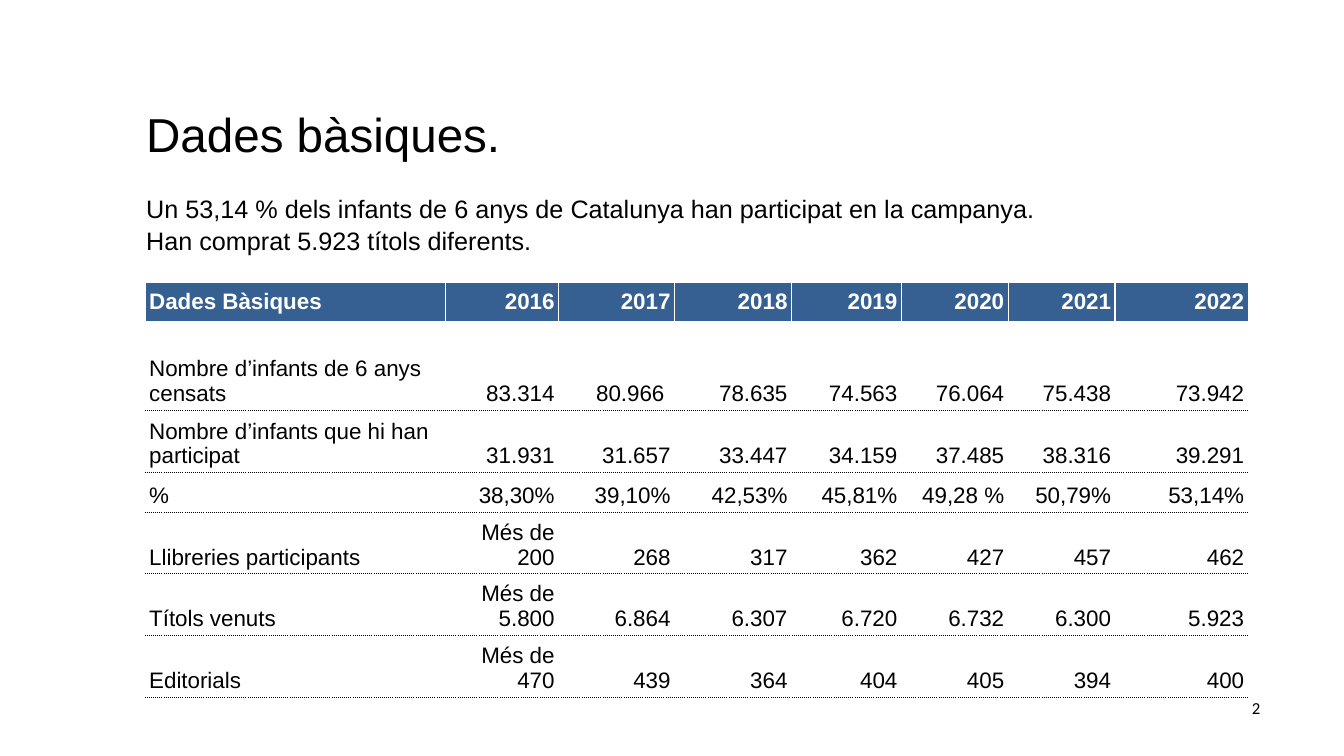
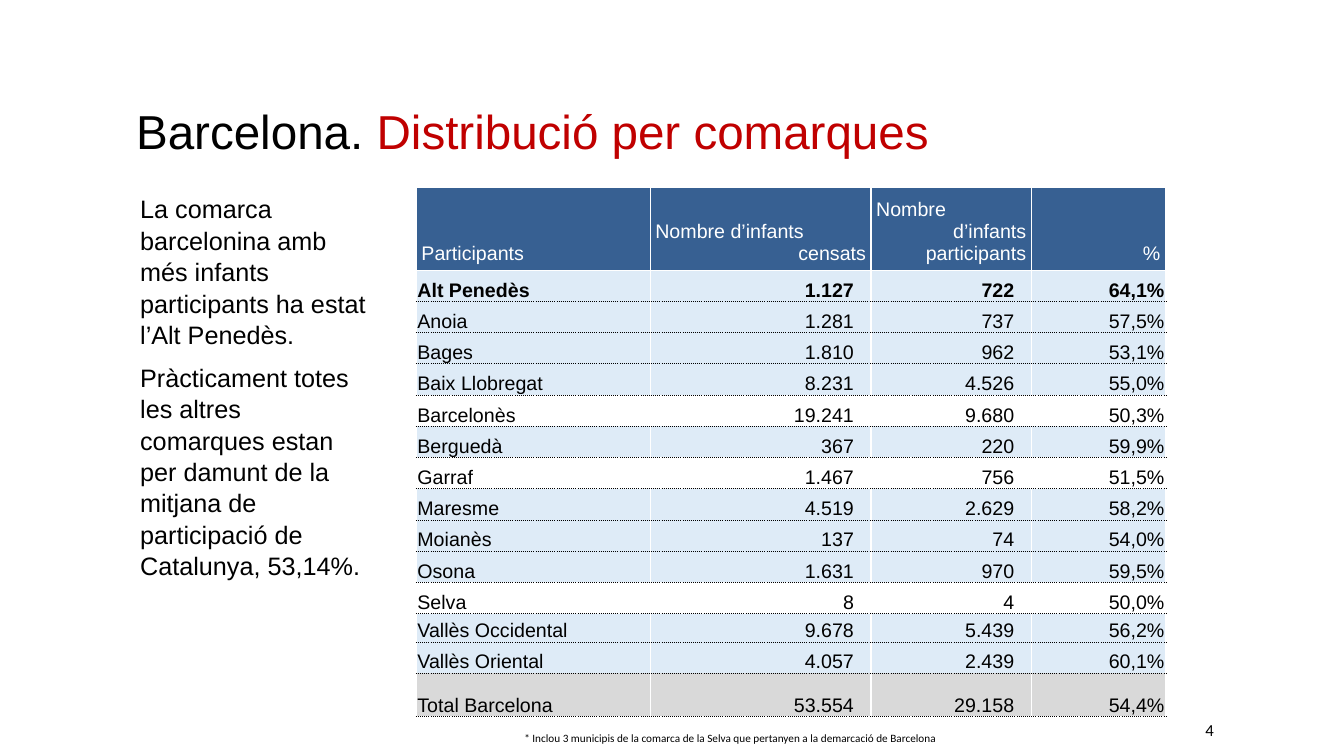
"""Build two slides of campaign figures: basic data and Barcelona by county."""
import pptx
import pptx.dml.color
import pptx.enum.text
import pptx.oxml
import pptx.oxml.ns
import pptx.util

RGB = pptx.dml.color.RGBColor
ALIGN = pptx.enum.text.PP_ALIGN
ANCHOR = pptx.enum.text.MSO_ANCHOR
BLACK = RGB(0x00, 0x00, 0x00)
WHITE = RGB(0xFF, 0xFF, 0xFF)
RED = RGB(0xC0, 0x00, 0x00)
HEADER_BLUE = RGB(0x37, 0x60, 0x92)
PALE_BLUE = RGB(0xDE, 0xEB, 0xF7)
TOTAL_GREY = RGB(0xD9, 0xD9, 0xD9)

BASIC_TITLE = [("Dades bàsiques.", BLACK)]
BASIC_INTRO = [
    "Un 53,14 % dels infants de 6 anys de Catalunya han participat en la campanya.",
    "Han comprat 5.923 títols diferents.",
]
BASIC_DATA = [
    ("Dades Bàsiques", "2016", "2017", "2018", "2019", "2020", "2021", "2022"),
    ("Nombre d’infants de 6 anys censats", "83.314", "80.966", "78.635", "74.563", "76.064", "75.438", "73.942"),
    ("Nombre d’infants que hi han participat", "31.931", "31.657", "33.447", "34.159", "37.485", "38.316", "39.291"),
    ("%", "38,30%", "39,10%", "42,53%", "45,81%", "49,28 %", "50,79%", "53,14%"),
    ("Llibreries participants", "Més de 200", "268", "317", "362", "427", "457", "462"),
    ("Títols venuts", "Més de 5.800", "6.864", "6.307", "6.720", "6.732", "6.300", "5.923"),
    ("Editorials", "Més de 470", "439", "364", "404", "405", "394", "400"),
]
BASIC_COLUMNS = [2.98, 1.12, 1.15, 1.16, 1.09, 1.06, 1.06, 1.32]
BASIC_ROWS = [0.39, 0.88, 0.62, 0.39] + [0.61] * 3

COUNTY_TITLE = [("Barcelona. ", BLACK), ("Distribució per comarques", RED)]
COUNTY_COMMENT = [
    "La comarca barcelonina amb més infants participants ha estat l’Alt Penedès.",
    "Pràcticament totes les altres comarques estan per damunt de la mitjana de participació de Catalunya, 53,14%.",
]
COUNTY_DATA = [
    ("Participants", "Nombre d’infants\ncensats", "Nombre\nd’infants participants", "%"),
    ("Alt Penedès", "1.127", "722", "64,1%"),
    ("Anoia", "1.281", "737", "57,5%"),
    ("Bages", "1.810", "962", "53,1%"),
    ("Baix Llobregat", "8.231", "4.526", "55,0%"),
    ("Barcelonès", "19.241", "9.680", "50,3%"),
    ("Berguedà", "367", "220", "59,9%"),
    ("Garraf", "1.467", "756", "51,5%"),
    ("Maresme", "4.519", "2.629", "58,2%"),
    ("Moianès", "137", "74", "54,0%"),
    ("Osona", "1.631", "970", "59,5%"),
    ("Selva", "8", "4", "50,0%"),
    ("Vallès Occidental", "9.678", "5.439", "56,2%"),
    ("Vallès Oriental", "4.057", "2.439", "60,1%"),
    ("Total Barcelona", "53.554", "29.158", "54,4%"),
]
BELOW_AVERAGE = {"Barcelonès", "Garraf", "Selva"}
COUNTY_COLUMNS = [2.32, 2.19, 1.59, 1.33]
COUNTY_ROWS = [0.82] + [0.31] * 11 + [0.28, 0.31, 0.43]
FOOTNOTE = "* Inclou 3 municipis de la comarca de la Selva que pertanyen a la demarcació de Barcelona"


def inches(*lengths):
    return [pptx.util.Inches(length) for length in lengths]


def add_run(paragraph, words, size, color=BLACK, face="Arial", bold=False):
    run = paragraph.add_run()
    run.text = words
    run.font.size = pptx.util.Pt(size)
    run.font.name = face
    run.font.bold = bold
    run.font.color.rgb = color


def add_text(slide, place, paragraphs, size, face="Arial", gap=0, spacing=1.0,
             align=ALIGN.LEFT, anchor=ANCHOR.TOP):
    frame = slide.shapes.add_textbox(*inches(*place)).text_frame
    frame.word_wrap = True
    frame.vertical_anchor = anchor
    frame.margin_left = frame.margin_right = pptx.util.Inches(0.05)
    frame.margin_top = frame.margin_bottom = pptx.util.Inches(0.05)
    for index, runs in enumerate(paragraphs):
        paragraph = frame.add_paragraph() if index else frame.paragraphs[0]
        paragraph.alignment = align
        paragraph.line_spacing = spacing
        if index:
            paragraph.space_before = pptx.util.Pt(gap)
        for words, color in runs:
            add_run(paragraph, words, size, color, face)


def add_body(slide, place, sentences, gap=0):
    add_text(slide, place, [[(words, BLACK)] for words in sentences], 18, gap=gap, spacing=1.04)


def start_slide(deck, title, title_place, number, number_place):
    slide = deck.slides.add_slide(deck.slide_layouts[6])
    add_text(slide, title_place, [title], 34, spacing=1.05)
    add_text(slide, number_place, [[(number, BLACK)]], 12, "Calibri",
             align=ALIGN.RIGHT, anchor=ANCHOR.MIDDLE)
    return slide


def set_borders(cell, row):
    dotted, plain = (0.5, BLACK, "sysDot"), (1, WHITE, "solid")
    sides = {
        "lnL": plain,
        "lnR": plain,
        "lnT": dotted if row > 1 else plain,
        "lnB": dotted if row else plain,
    }
    properties = cell._tc.get_or_add_tcPr()
    for position, (side, (width, color, dash)) in enumerate(sides.items()):
        properties.insert(position, pptx.oxml.parse_xml(
            f'<a:{side} {pptx.oxml.ns.nsdecls("a")} w="{pptx.util.Pt(width)}">'
            f'<a:solidFill><a:srgbClr val="{color}"/></a:solidFill>'
            f'<a:prstDash val="{dash}"/></a:{side}>'))


def add_data(slide, corner, data, columns, rows, size, style):
    place = inches(*corner, sum(columns), sum(rows))
    table = slide.shapes.add_table(len(rows), len(columns), *place).table
    table.horz_banding = False
    for column, width in zip(table.columns, columns):
        column.width = pptx.util.Inches(width)
    for line, height in zip(table.rows, rows):
        line.height = pptx.util.Inches(height)
    for row, values in enumerate(data):
        for column, value in enumerate(values):
            cell = table.cell(row, column)
            fill, bold, anchor, margins = style(row, column, values[0])
            (cell.margin_left, cell.margin_right,
             cell.margin_top, cell.margin_bottom) = inches(*margins)
            cell.vertical_anchor = anchor
            cell.fill.solid()
            cell.fill.fore_color.rgb = fill
            set_borders(cell, row)
            parts = value.split("\n")
            for index, words in enumerate(parts):
                frame = cell.text_frame
                paragraph = frame.add_paragraph() if index else frame.paragraphs[0]
                last = index == len(parts) - 1
                paragraph.alignment = ALIGN.RIGHT if column and last else ALIGN.LEFT
                add_run(paragraph, words, size, BLACK if row else WHITE, bold=bold)


def basic_style(row, column, label):
    right = 0.1 if (row, column) == (1, 2) else 0.04
    margins = (0.04, right, 0.04, 0.04)
    if row == 0:
        return HEADER_BLUE, True, ANCHOR.MIDDLE, margins
    return WHITE, False, ANCHOR.BOTTOM, margins


def county_style(row, column, label):
    if row == 0:
        return HEADER_BLUE, False, ANCHOR.BOTTOM, (0.05,) * 4
    fill = WHITE if label in BELOW_AVERAGE else PALE_BLUE
    if row == len(COUNTY_DATA) - 1:
        fill = TOTAL_GREY
    right = 0.17 if column in (1, 2) else 0.01
    return fill, row == 1, ANCHOR.BOTTOM, (0.01, right, 0.01, 0)


def main():
    deck = pptx.Presentation()
    deck.slide_width, deck.slide_height = inches(13.33, 7.5)

    basic = start_slide(deck, BASIC_TITLE, (1.4, 0.96, 9.64, 0.67), "2", (12.36, 6.87, 0.19, 0.3))
    add_body(basic, (1.4, 1.86, 10.14, 0.71), BASIC_INTRO)
    add_data(basic, (1.44, 2.8), BASIC_DATA, BASIC_COLUMNS, BASIC_ROWS, 16, basic_style)

    county = start_slide(deck, COUNTY_TITLE, (1.3, 0.93, 10.28, 0.67), "4", (11.9, 7.09, 0.19, 0.3))
    add_data(county, (4.13, 1.86), COUNTY_DATA, COUNTY_COLUMNS, COUNTY_ROWS, 14, county_style)
    add_body(county, (1.34, 1.86, 2.38, 3.85), COUNTY_COMMENT, gap=8)
    add_text(county, (5.15, 7.21, 5.1, 0.21), [[(FOOTNOTE, BLACK)]], 8, "Calibri")

    deck.save("out.pptx")


if __name__ == "__main__":
    main()
